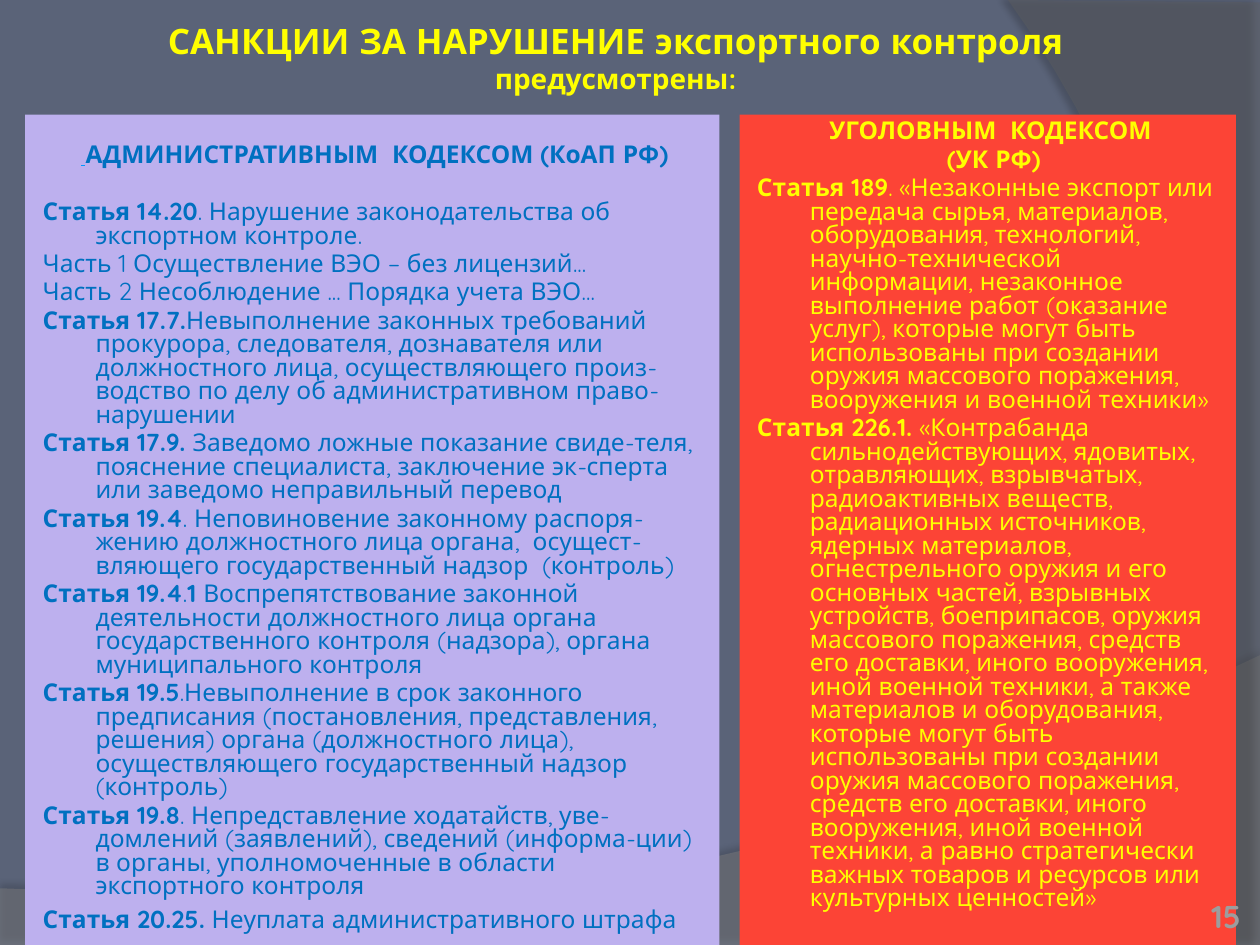
import dataclasses

import pptx
import pptx.dml.color
import pptx.enum.shapes
import pptx.enum.text
import pptx.oxml
import pptx.util

Inches = pptx.util.Inches
Pt = pptx.util.Pt
Align = pptx.enum.text.PP_ALIGN
Anchor = pptx.enum.text.MSO_ANCHOR
DRAWING_NS = "http://schemas.openxmlformats.org/drawingml/2006/main"


@dataclasses.dataclass(frozen=True)
class Theme:
    font: str = "Quicksand"
    background: str = "5A6378"
    wave: str = "7F7F7F"
    arc: str = "5E5E5E"
    lilac: str = "BDB0EE"
    red: str = "FC4436"
    blue: str = "0070C0"
    light_blue: str = "0099FF"
    yellow: str = "FFFF00"
    grey: str = "9D9D9E"
    title_size: int = 20
    subtitle_size: int = 16
    number_size: int = 18
    body_size: int = 14
    small_size: int = 9


theme = Theme()


def rgb(color):
    return pptx.dml.color.RGBColor.from_string(color)


def add_span(para, text, size, color, bold=True):
    span = para.add_run()
    span.text = text
    span.font.name = theme.font
    span.font.size = Pt(size)
    span.font.bold = bold
    span.font.color.rgb = rgb(color)
    return span


deck = pptx.Presentation()
deck.slide_width, deck.slide_height = Inches(10), Inches(7.5)
page = deck.slides.add_slide(deck.slide_layouts[5])
page.background.fill.solid()
page.background.fill.fore_color.rgb = rgb(theme.background)

decorations = [
    (theme.wave, 45, 35, 3.5, 270,
     [(0, 7.05), (0, 7.51), (10, 7.51)],
     [(10, 5.2), (5.59, 7.29), (3.91, 7.19), (0, 7.05)]),
    (theme.arc, 40, 45, 4, 180,
     [(10, 0.02), (10, 7.5)],
     [(8.21, 7.5), (9.35, 6.19), (10.18, 3), (8, 0)]),
]
STEPS = 32
for color, opacity, shadow_opacity, distance, angle, corners, bezier in decorations:
    points = list(corners)
    for step in range(STEPS + 1):
        t = step / STEPS
        weights = ((1 - t) ** 3, 3 * t * (1 - t) ** 2, 3 * t * t * (1 - t), t ** 3)
        points.append(tuple(sum(w * p[axis] for w, p in zip(weights, bezier)) for axis in (0, 1)))
    outline = [(Inches(x), Inches(y)) for x, y in points]
    builder = page.shapes.build_freeform(*outline[0])
    builder.add_line_segments(outline[1:], close=True)
    shape = builder.convert_to_shape()
    shape.fill.solid()
    shape.fill.fore_color.rgb = rgb(color)
    shape.line.fill.background()
    fill_color = shape.element.spPr.find(f".//{{{DRAWING_NS}}}srgbClr")
    fill_color.append(pptx.oxml.parse_xml(f'<a:alpha xmlns:a="{DRAWING_NS}" val="{opacity * 1000}"/>'))
    shape.element.spPr.append(pptx.oxml.parse_xml(
        f'<a:effectLst xmlns:a="{DRAWING_NS}">'
        f'<a:outerShdw blurRad="{Pt(4)}" dist="{Pt(distance)}" dir="{angle * 60000}" rotWithShape="0">'
        f'<a:srgbClr val="000000"><a:alpha val="{shadow_opacity * 1000}"/></a:srgbClr>'
        '</a:outerShdw></a:effectLst>'))

title = page.shapes.title
title.element.getparent().append(title.element)
title.left, title.top, title.width, title.height = Inches(0.67), Inches(0), Inches(8.43), Inches(0.91)
frame = title.text_frame
frame.word_wrap = True
frame.vertical_anchor = Anchor.MIDDLE
frame.margin_left = frame.margin_right = frame.margin_top = frame.margin_bottom = Inches(0.05)
para = frame.paragraphs[0]
para.alignment = Align.CENTER
add_span(para, "САНКЦИИ ЗА НАРУШЕНИЕ экспортного контроля", theme.title_size, theme.yellow)
para.add_line_break()
add_span(para, "предусмотрены:", theme.subtitle_size, theme.yellow)

administrative_headings = ["АДМИНИСТРАТИВНЫМ  КОДЕКСОМ (КоАП РФ)"]
administrative_articles = [
    ("Статья 14.20", ". Нарушение законодательства об экспортном контроле."),
    ("", "Часть 1 Осуществление ВЭО – без лицензий..."),
    ("", "Часть 2 Несоблюдение ... Порядка учета ВЭО..."),
    ("Статья 17.7.", "Невыполнение законных требований прокурора, следователя, дознавателя или "
     "должностного лица, осуществляющего произ-водство по делу об административном право-нарушении"),
    ("Статья 17.9. ", "Заведомо ложные показание свиде-теля, пояснение специалиста, "
     "заключение эк-сперта или заведомо неправильный перевод"),
    ("Статья 19.4", ". Неповиновение законному распоря-жению должностного лица органа,  "
     "осущест-вляющего государственный надзор  (контроль)"),
    ("Статья 19.4", ".", "1 ", "Воспрепятствование законной деятельности должностного лица органа "
     "государственного контроля (надзора), органа муниципального контроля"),
    ("Статья 19.5", ".Невыполнение в срок законного  предписания (постановления, представления, "
     "решения) органа (должностного лица), осуществляющего государственный надзор (контроль)"),
    ("Статья 19.8", ". Непредставление ходатайств, уве-домлений (заявлений), сведений "
     "(информа-ции) в органы, уполномоченные в области экспортного контроля"),
    ("Статья 20.25.", " Неуплата административного штрафа"),
]
criminal_headings = ["УГОЛОВНЫМ  КОДЕКСОМ", " (УК РФ)"]
criminal_articles = [
    ("Статья 189", ". «Незаконные экспорт или передача сырья, материалов, оборудования, технологий, "
     "научно-технической информации, незаконное выполнение работ (оказание услуг), которые могут быть "
     "использованы при создании оружия массового поражения, вооружения и военной техники»"),
    ("Статья 226.1. ", "«Контрабанда сильнодействующих, ядовитых, отравляющих, взрывчатых, "
     "радиоактивных веществ, радиационных источников, ядерных материалов, огнестрельного оружия и его "
     "основных частей, взрывных устройств, боеприпасов, оружия массового поражения, средств его "
     "доставки, иного вооружения, иной военной техники, а также материалов и оборудования, которые "
     "могут быть использованы при создании оружия массового поражения, средств его доставки, иного "
     "вооружения, иной военной техники, а равно стратегически важных товаров и ресурсов или "
     "культурных ценностей»"),
]
panels = [
    (0.2, 5.51, theme.lilac, theme.blue, 0.24, 19, administrative_headings, administrative_articles),
    (5.87, 3.94, theme.red, theme.yellow, 0.05, 2.8, criminal_headings, criminal_articles),
]
frames = []
for left, width, fill, color, inset, heading_gap, headings, articles in panels:
    panel = page.shapes.add_shape(pptx.enum.shapes.MSO_SHAPE.RECTANGLE,
                                  Inches(left), Inches(0.91), Inches(width), Inches(6.59))
    panel.shadow.inherit = False
    panel.fill.solid()
    panel.fill.fore_color.rgb = rgb(fill)
    panel.line.fill.background()
    frame = panel.text_frame
    frame.word_wrap = True
    frame.vertical_anchor = Anchor.TOP
    frame.margin_top = Inches(inset)
    frames.append(frame)
    rows = [(heading,) for heading in headings] + articles
    for index, pieces in enumerate(rows):
        para = frame.paragraphs[0] if index == 0 else frame.add_paragraph()
        para.alignment = Align.CENTER if index < len(headings) else Align.LEFT
        para.line_spacing = 0.8
        para.space_before = Pt(heading_gap if index == len(headings) else 2.8)
        properties = para._p.get_or_add_pPr()
        properties.set("marL", str(Inches(0.46)))
        properties.set("indent", str(Inches(-0.42)))
        if index == 0 and fill == theme.lilac:
            add_span(para, " ", theme.small_size, theme.light_blue).font.underline = True
        for position, piece in enumerate(pieces):
            if piece:
                add_span(para, piece, theme.body_size, color, bold=position % 2 == 0)
frames[0].paragraphs[-1].line_spacing = 1.0

box = page.shapes.add_textbox(Inches(9.47), Inches(7.11), Inches(0.38), Inches(0.31))
frame = box.text_frame
frame.word_wrap = True
frame.vertical_anchor = Anchor.BOTTOM
frame.margin_left = frame.margin_right = frame.margin_top = frame.margin_bottom = 0
para = frame.paragraphs[0]
para.alignment = Align.RIGHT
add_span(para, "15", theme.number_size, theme.grey)

deck.save("out.pptx")
